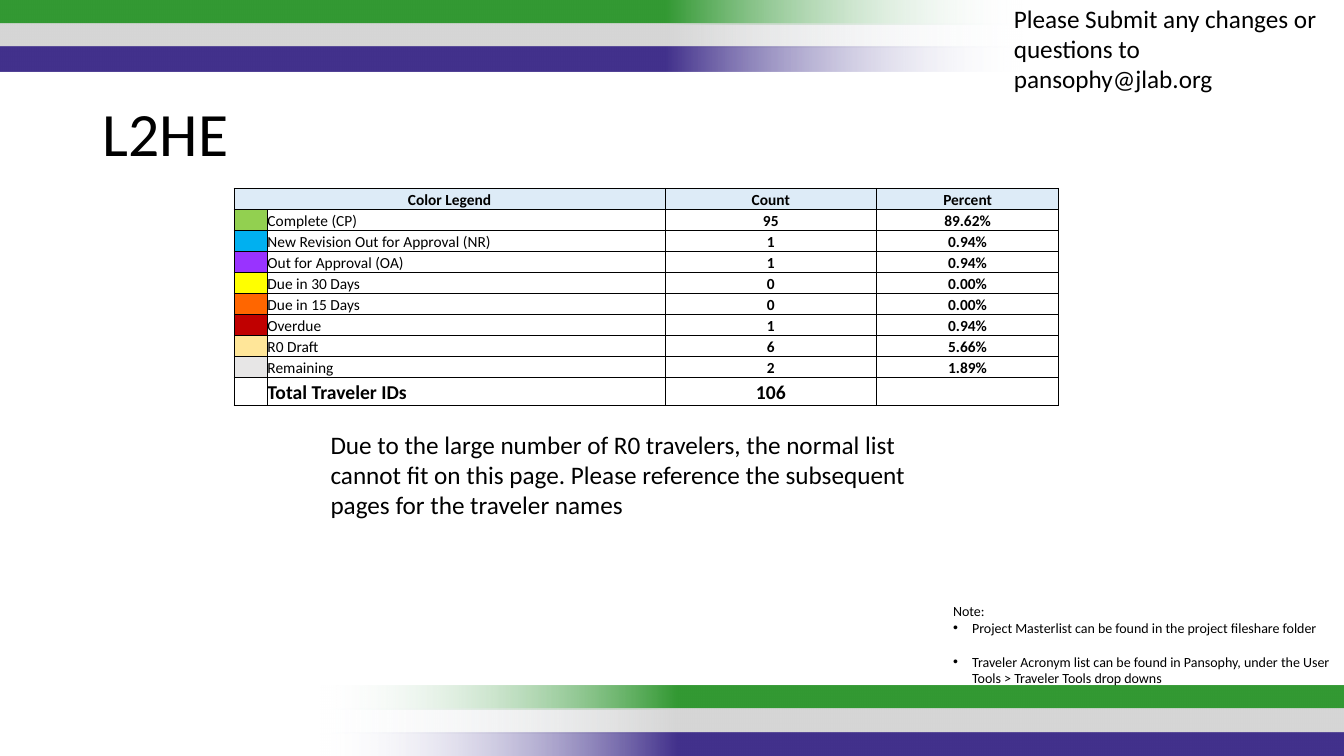
"""Build the L2HE traveler status slide."""
from lxml.etree import SubElement
from pptx import Presentation
from pptx.dml.color import RGBColor
from pptx.enum.shapes import MSO_SHAPE
from pptx.enum.text import MSO_ANCHOR, PP_ALIGN
from pptx.oxml.ns import qn
from pptx.util import Cm, Pt

COLORS = {
    "black": "000000", "fade": "F7FAFD", "green": "339933", "gray": "D6D6D6",
    "indigo": "42318C", "header": "DDEBF7", "complete": "92D050",
    "revision": "00B0F0", "approval": "9933FF", "due_30": "FFFF00",
    "due_15": "FF6600", "overdue": "C00000", "draft": "FFE699",
    "remaining": "E7E6E6",
}
FONT = "Calibri"


def add_text(paragraph, text, size, bold=False):
    run = paragraph.add_run()
    run.text = text
    run.font.name = FONT
    run.font.size = Pt(size)
    run.font.bold = bold
    run.font.color.rgb = RGBColor.from_string(COLORS["black"])


def add_box(left, top, width, height):
    box = slide.shapes.add_textbox(Cm(left), Cm(top), Cm(width), Cm(height))
    box.text_frame.word_wrap = True
    return box.text_frame


presentation = Presentation()
presentation.slide_width = Cm(33.87)
presentation.slide_height = Cm(19.05)
slide = presentation.slides.add_slide(presentation.slide_layouts[6])

for band_left, band_top, rotation in [(-0.03, 0, 180), (8.06, 17.27, 0)]:
    for index, color in enumerate(["green", "gray", "indigo"]):
        band = slide.shapes.add_shape(
            MSO_SHAPE.RECTANGLE, Cm(band_left), Cm(band_top + index * 0.59),
            Cm(25.83), Cm(0.61))
        band.rotation = rotation
        band.shadow.inherit = False
        band.line.fill.background()
        band.fill.gradient()
        band.fill.gradient_angle = 0
        stops = band.fill.gradient_stops
        stops[0].position = 0
        stops[0].color.rgb = RGBColor.from_string(COLORS["fade"])
        stops[1].position = 0.35
        stops[1].color.rgb = RGBColor.from_string(COLORS[color])
        stop_list = band._element.spPr.find(qn("a:gradFill")).find(qn("a:gsLst"))
        SubElement(stop_list[0][0], qn("a:alpha"), val="0")
        end_stop = SubElement(stop_list, qn("a:gs"), pos="100000")
        SubElement(end_stop, qn("a:srgbClr"), val=COLORS[color])

title = add_box(2.34, 2.18, 29.21, 2.51)
title.vertical_anchor = MSO_ANCHOR.MIDDLE
title.paragraphs[0].line_spacing = 0.9
add_text(title.paragraphs[0], "L2HE", 44)

legend = [
    ("header", "Color Legend", "Count", "Percent"),
    ("complete", "Complete (CP)", "95", "89.62%"),
    ("revision", "New Revision Out for Approval (NR)", "1", "0.94%"),
    ("approval", "Out for Approval (OA)", "1", "0.94%"),
    ("due_30", "Due in 30 Days", "0", "0.00%"),
    ("due_15", "Due in 15 Days", "0", "0.00%"),
    ("overdue", "Overdue", "1", "0.94%"),
    ("draft", "R0 Draft", "6", "5.66%"),
    ("remaining", "Remaining", "2", "1.89%"),
    (None, "Total Traveler IDs", "106", ""),
]
last_row = len(legend) - 1
thin_left_rows = (6, 7)
table = slide.shapes.add_table(
    len(legend), 4, Cm(5.9), Cm(4.75), Cm(20.78), Cm(5.46)).table
table.first_row = False
table.horz_banding = False
for column, width in zip(table.columns, [0.84, 10.02, 5.33, 4.59]):
    column.width = Cm(width)
table.cell(0, 0).merge(table.cell(0, 1))

for row, (color, label, count, percent) in enumerate(legend):
    is_header, is_total = row == 0, row == last_row
    table.rows[row].height = Cm(0.69 if is_total else 0.53)
    texts = [label, "", count, percent] if is_header else ["", label, count, percent]
    for column, text in enumerate(texts):
        cell = table.cell(row, column)
        cell.margin_left = cell.margin_right = Cm(0)
        cell.margin_top = cell.margin_bottom = Cm(0)
        cell.vertical_anchor = MSO_ANCHOR.BOTTOM
        if color and (is_header or column == 0):
            cell.fill.solid()
            cell.fill.fore_color.rgb = RGBColor.from_string(COLORS[color])
        else:
            cell.fill.background()

        paragraph = cell.text_frame.paragraphs[0]
        if is_header or column > 1:
            paragraph.alignment = PP_ALIGN.CENTER
        if text:
            bold = is_header or is_total or column > 1
            add_text(paragraph, text, 14 if is_total and column else 11, bold)
        else:
            SubElement(paragraph._p, qn("a:endParaRPr"), sz="1100")

        thick_sides = {
            "lnL": column == 0 and row not in thin_left_rows,
            "lnR": column == 3,
            "lnT": is_header,
            "lnB": is_total,
        }
        properties = cell._tc.get_or_add_tcPr()
        for position, (side, thick) in enumerate(thick_sides.items()):
            border = SubElement(properties, qn(f"a:{side}"),
                                w=str(Pt(1 if thick else 0.5)))
            line_fill = SubElement(border, qn("a:solidFill"))
            SubElement(line_fill, qn("a:srgbClr"), val=COLORS["black"])
            properties.insert(position, border)

contact = add_box(25.3, -0.05, 8.58, 2.57)
add_text(contact.paragraphs[0],
         "Please Submit any changes or questions to pansophy@jlab.org", 18)

note = add_box(23.77, 15.06, 10.08, 2.39)
add_text(note.paragraphs[0], "Note:", 10)
for text, space_before in [
    ("Project Masterlist can be found in the project fileshare folder", 0),
    ("Traveler Acronym list can be found in Pansophy, under the User Tools > "
     "Traveler Tools drop downs", 12),
]:
    paragraph = note.add_paragraph()
    paragraph.space_before = Pt(space_before)
    properties = paragraph._p.get_or_add_pPr()
    properties.set("marL", str(Cm(0.48)))
    properties.set("indent", str(-Cm(0.48)))
    SubElement(properties, qn("a:buFont"), typeface="Arial")
    SubElement(properties, qn("a:buChar"), char="•")
    add_text(paragraph, text, 10)

explanation = add_box(8.08, 10.69, 16.43, 2.57)
add_text(explanation.paragraphs[0],
         "Due to the large number of R0 travelers, the normal list cannot fit on "
         "this page. Please reference the subsequent pages for the traveler names", 18)

presentation.save("out.pptx")
